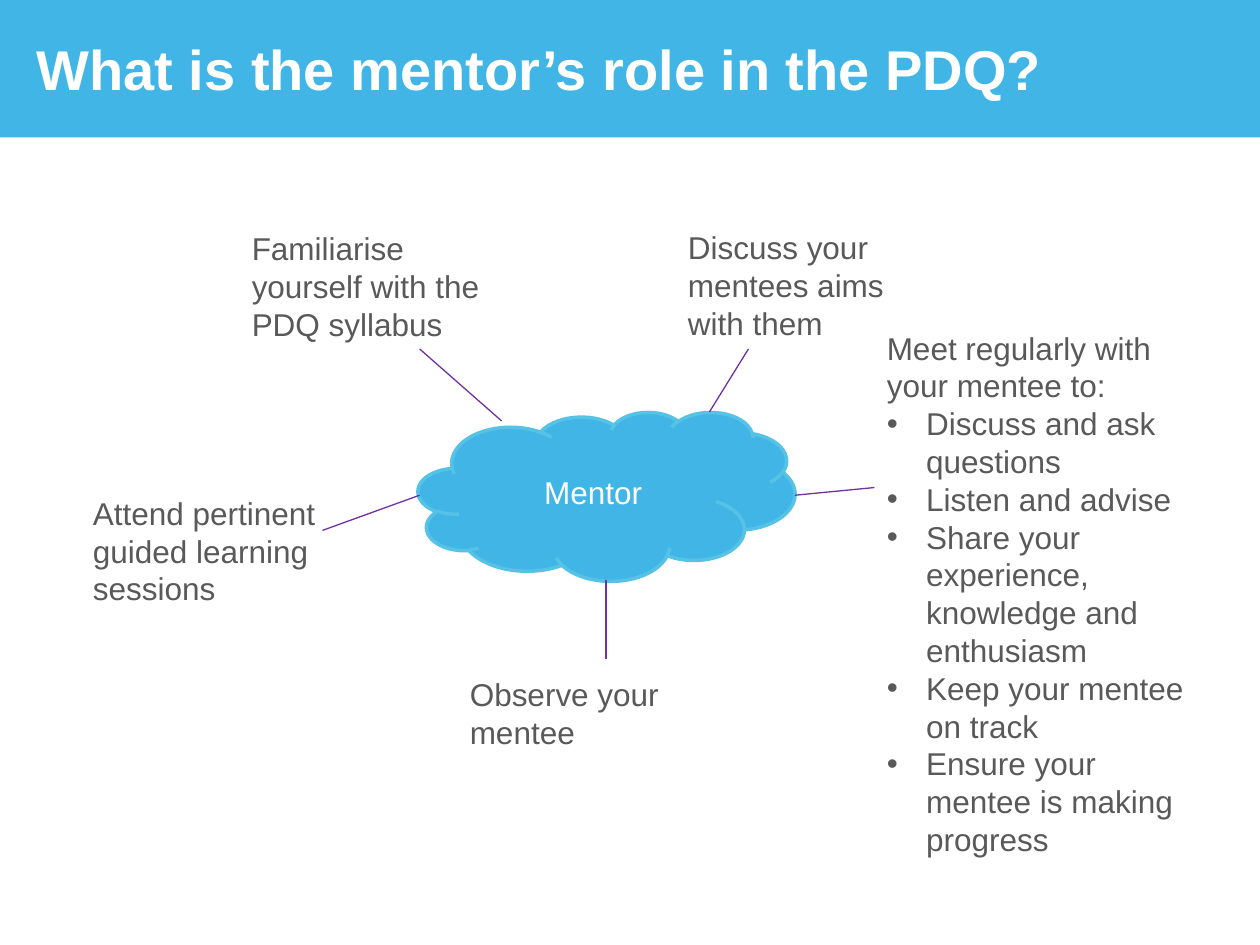
from lxml import etree
from pptx import Presentation
from pptx.dml.color import RGBColor
from pptx.enum import shapes, text
from pptx.oxml.ns import qn
from pptx.util import Pt

HUES = {"sky": "41B6E6", "edge": "56C2E6", "grey": "595959",
        "white": "FFFFFF", "plum": "7030A0"}
FONT = "Arial"


class Deck:
    def __init__(self, wide, high):
        self.prs = Presentation()
        self.prs.slide_width, self.prs.slide_height = Pt(wide), Pt(high)
        self.slide = self.prs.slides.add_slide(self.prs.slide_layouts[5])

    def hue(self, name):
        return RGBColor.from_string(HUES[name])

    def run(self, para, words, size=18, hue="grey", bold=False):
        run = para.add_run()
        run.text = words
        font = run.font
        font.name, font.size, font.bold = FONT, Pt(size), bold
        font.color.rgb = self.hue(hue)

    def form(self, kind, box, edge=None):
        form = self.slide.shapes.add_shape(kind, *map(Pt, box))
        form.shadow.inherit = False
        form.fill.solid()
        form.fill.fore_color.rgb = self.hue("sky")
        if edge:
            form.line.color.rgb = self.hue(edge)
            form.line.width = Pt(2)
        else:
            form.line.fill.background()
        return form

    def title(self, words, box, band):
        title = self.slide.shapes.title
        title.left, title.top, title.width, title.height = map(Pt, box)
        frame = title.text_frame
        frame.auto_size = text.MSO_AUTO_SIZE.NONE
        frame.vertical_anchor = text.MSO_ANCHOR.MIDDLE
        para = frame.paragraphs[0]
        para.alignment = text.PP_ALIGN.LEFT
        self.run(para, words, 32, "white", True)
        # The band lies behind the title
        back = self.form(shapes.MSO_SHAPE.RECTANGLE, band)
        title._element.addprevious(back._element)

    def cloud(self, words, box):
        cloud = self.form(shapes.MSO_SHAPE.CLOUD, box, "edge")
        frame = cloud.text_frame
        frame.vertical_anchor = text.MSO_ANCHOR.MIDDLE
        para = frame.paragraphs[0]
        para.alignment = text.PP_ALIGN.CENTER
        self.run(para, words, hue="white")

    def note(self, words, box, points=()):
        frame = self.slide.shapes.add_textbox(*map(Pt, box)).text_frame
        frame.word_wrap = True
        for i, line in enumerate([words, *points]):
            para = frame.add_paragraph() if i else frame.paragraphs[0]
            if i:
                self.dot(para)
            para.line_spacing = Pt(21.6)
            self.run(para, line)

    def dot(self, para):
        props = para._p.get_or_add_pPr()
        props.set("marL", str(Pt(22.5)))
        props.set("indent", str(-Pt(22.5)))
        etree.SubElement(props, qn("a:buFont")).set("typeface", FONT)
        etree.SubElement(props, qn("a:buChar")).set("char", "•")

    def link(self, *ends):
        link = self.slide.shapes.add_connector(
            shapes.MSO_CONNECTOR.STRAIGHT, *map(Pt, ends))
        link.line.color.rgb = self.hue("plum")
        link.line.width = Pt(0.75)
        etree.SubElement(link._element.spPr, qn("a:effectLst"))


def main():
    deck = Deck(720, 540)

    # Heading
    deck.title("What is the mentor’s role in the PDQ?",
               (13.7, 8.6, 698.4, 61.2), (0, 0, 720, 78.5))

    # Hub
    deck.cloud("Mentor", (239, 235.4, 215.3, 96.5))

    # Tasks around the hub
    wide = 153.4
    for words, left, top, high in (
            ("Familiarise yourself with the PDQ syllabus", 136.8, 127.4, 72.7),
            ("Discuss your mentees aims with them", 386, 126.7, 72.7),
            ("Observe your mentee", 261.4, 382.3, 51.1),
            ("Attend pertinent guided learning sessions", 46, 278.6, 72.7)):
        deck.note(words, (left, top, wide, high))
    deck.note("Meet regularly with your mentee to:",
              (499.7, 184.3, 189.4, 290.9),
              ("Discuss and ask questions",
               "Listen and advise",
               "Share your experience, knowledge and enthusiasm",
               "Keep your mentee on track",
               "Ensure your mentee is making progress"))

    # Lines from hub to tasks
    for ends in ((405.4, 235.4, 427.7, 199.4),
                 (454.3, 283, 499.7, 278.6),
                 (346.3, 331.2, 346.3, 376.6),
                 (239.8, 283, 184.3, 303.1),
                 (286.6, 240.5, 239.8, 199.4)):
        deck.link(*ends)

    deck.prs.save("out.pptx")


if __name__ == "__main__":
    main()
